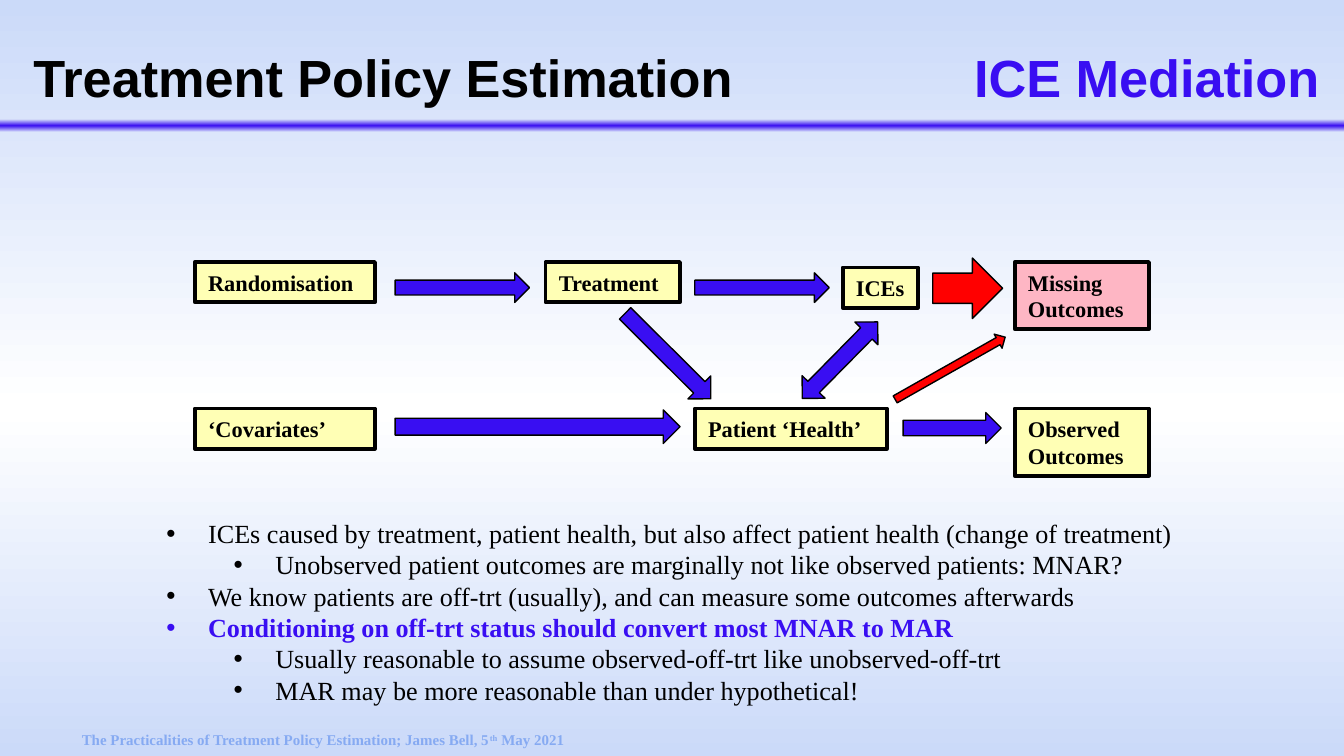
"""Build the treatment policy slide on ICE mediation."""
from pptx import Presentation
from pptx.dml.color import RGBColor
from pptx.enum.shapes import MSO_SHAPE
from pptx.enum.text import PP_ALIGN
from pptx.oxml.ns import qn
from pptx.util import Inches, Pt
from lxml import etree

RECT = MSO_SHAPE.RECTANGLE
RIGHT = MSO_SHAPE.RIGHT_ARROW
BOTH_WAYS = MSO_SHAPE.LEFT_RIGHT_ARROW
LEFT = PP_ALIGN.LEFT
BLACK, BLUE, RED = "000000", "390EF2", "FF0000"
YELLOW, PINK, PALE, WHITE = "FFFFB5", "FEB6C4", "CBDAF9", "FFFFFF"
SERIF = "Times New Roman"

deck = Presentation()
deck.slide_width = Inches(10)
deck.slide_height = deck.slide_width * 9 // 16
slide = deck.slides.add_slide(deck.slide_layouts[6])
CELL = deck.slide_width / 100


def grid(*cells):
    return [round(cell * CELL) for cell in cells]


def gradient(fill, owner, angle, stops):
    fill.gradient()
    fill.gradient_angle = angle
    stop_list = owner.find(".//" + qn("a:gsLst"))
    for old in list(stop_list):
        stop_list.remove(old)
    for position, color, opacity in stops:
        stop = etree.SubElement(stop_list, qn("a:gs"), pos=str(position * 1000))
        tint = etree.SubElement(stop, qn("a:srgbClr"), val=color)
        etree.SubElement(tint, qn("a:alpha"), val=str(opacity * 1000))


gradient(slide.background.fill, slide.element, 90,
         [(0, PALE, 100), (46, WHITE, 100), (100, PALE, 100)])

divider = slide.shapes.add_shape(RECT, *grid(0, 8.9, 100, 0.9))
divider.shadow.inherit = False
divider.line.fill.background()
gradient(divider.fill, divider.element, 270,
         [(0, BLUE, 0), (50, BLUE, 100), (100, BLUE, 0)])

heading = slide.shapes.add_textbox(*grid(1.5, 2.3, 100.1, 6)).text_frame
heading.word_wrap = True
heading.margin_top, heading.margin_bottom = grid(1.1, 0.5)
title = heading.paragraphs[0]
title.font.name, title.font.size, title.font.bold = "Arial", Pt(28), True
tab_stops = etree.Element(qn("a:tabLst"))
title._p.get_or_add_pPr().insert(0, tab_stops)
for position in grid(60, 70):
    etree.SubElement(tab_stops, qn("a:tab"), pos=str(position), algn="l")
for words, color in [("Treatment Policy Estimation\t\t", BLACK), ("ICE Mediation", BLUE)]:
    part = title.add_run()
    part.text = words
    part.font.color.rgb = RGBColor.from_string(color)

points = [
    (0, "ICEs caused by treatment, patient health, but also affect patient health (change of treatment)"),
    (1, "Unobserved patient outcomes are marginally not like observed patients: MNAR?"),
    (0, "We know patients are off-trt (usually), and can measure some outcomes afterwards"),
    (0, "Conditioning on off-trt status should convert most MNAR to MAR"),
    (1, "Usually reasonable to assume observed-off-trt like unobserved-off-trt"),
    (1, "MAR may be more reasonable than under hypothetical!"),
]
KEY_POINT = 3
argument = slide.shapes.add_textbox(*grid(11.4, 38, 77.5, 17.5)).text_frame
argument.word_wrap = True
for index, (level, words) in enumerate(points):
    point = argument.add_paragraph() if index else argument.paragraphs[0]
    point.text, point.level = words, level
    point.font.name, point.font.size = SERIF, Pt(14)
    point.font.bold = index == KEY_POINT
    point.font.color.rgb = RGBColor.from_string(BLUE if index == KEY_POINT else BLACK)
    layout = point._p.get_or_add_pPr()
    indent, hang = grid(3.1 + 5 * level, -3.1)
    layout.set("marL", str(indent))
    layout.set("indent", str(hang))
    bullet_font = etree.Element(qn("a:buFont"), typeface="Arial")
    bullet = etree.Element(qn("a:buChar"), char="•")
    layout.insert(0, bullet_font)
    bullet_font.addnext(bullet)

TOP, BOTTOM = 19.5, 30.4
START, TREATED, HEALTH, OUTCOME = 14.5, 40.6, 51.7, 75.5
AFTER_START = 29.4
nodes = [
    ("Randomisation", START, TOP, 13.4, 3, YELLOW),
    ("Treatment", TREATED, TOP, 10, 3, YELLOW),
    ("ICEs", 62.7, 19.9, 5.6, 3, YELLOW),
    ("Missing Outcomes", OUTCOME, TOP, 10, 5, PINK),
    ("‘Covariates’", START, BOTTOM, 13.4, 3, YELLOW),
    ("Patient ‘Health’", HEALTH, BOTTOM, 14.3, 3, YELLOW),
    ("Observed Outcomes", OUTCOME, BOTTOM, 10, 5, YELLOW),
]
effects = [
    (RIGHT, AFTER_START, 20.3, 10, 2.2, 0, BLUE),
    (RIGHT, HEALTH, 20.3, 10, 2.2, 0, BLUE),
    (RIGHT, 45.2, 25.3, 9, 2.4, 44.9, BLUE),
    (RIGHT, AFTER_START, 30.5, 21.2, 2.5, 0, BLUE),
    (BOTH_WAYS, 58.5, 25.6, 8, 2.4, 134.6, BLUE),
    (RIGHT, 67.2, 30.7, 7.3, 2.3, 0, BLUE),
    (RIGHT, 69.4, 19.2, 5.2, 4.5, 0, RED),
    (RIGHT, 66, 26.8, 9.4, 1.2, 330.5, RED),
]
diagram = [(RECT, *place, 0, color, 2, label) for label, *place, color in nodes]
diagram += [(*effect, 0.75, "") for effect in effects]
for kind, *place, turn, color, weight, label in diagram:
    item = slide.shapes.add_shape(kind, *grid(*place))
    item.shadow.inherit = False
    item.rotation = turn
    item.fill.solid()
    item.fill.fore_color.rgb = RGBColor.from_string(color)
    item.line.color.rgb = RGBColor.from_string(BLACK)
    item.line.width = Pt(weight)
    if label:
        caption = item.text_frame.paragraphs[0]
        caption.text, caption.alignment = label, LEFT
        caption.font.name, caption.font.size, caption.font.bold = SERIF, Pt(12), True
        caption.font.color.rgb = RGBColor.from_string(BLACK)

footer = slide.shapes.add_textbox(*grid(5.1, 53.9, 88.2, 2.3)).text_frame
footer.word_wrap = True
source = footer.paragraphs[0]
source.font.name, source.font.size, source.font.bold = SERIF, Pt(8), True
source.font.color.rgb = RGBColor.from_string("86AAF2")
for words, raised in [
    ("The Practicalities of Treatment Policy Estimation; James Bell, 5", 0),
    ("th", 30),
    (" May 2021", 0),
]:
    part = source.add_run()
    part.text = words
    part._r.get_or_add_rPr().set("baseline", str(raised * 1000))

deck.save("out.pptx")
